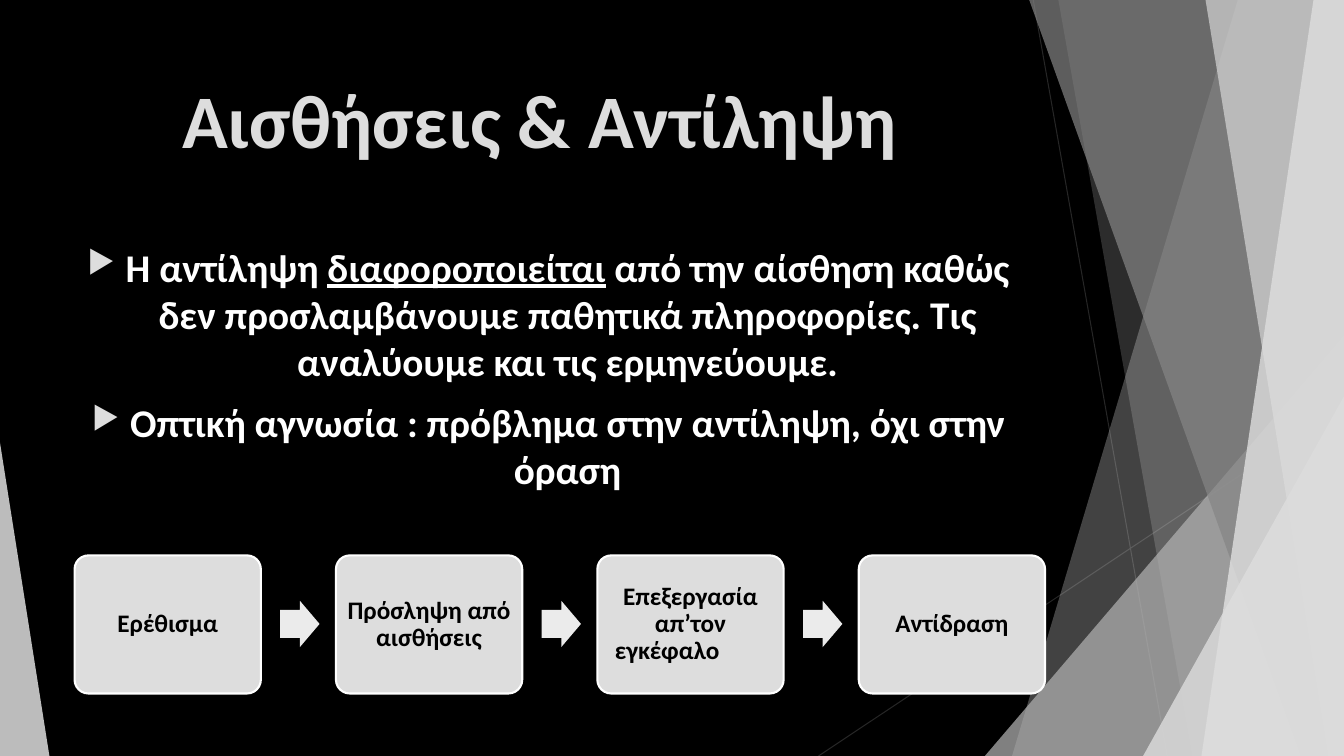
import pptx
import pptx.util
import pptx.dml.color
import pptx.enum.shapes
import pptx.enum.text
import pptx.oxml
import pptx.oxml.ns
import lxml.etree
from dataclasses import dataclass

SHAPE = pptx.enum.shapes.MSO_SHAPE
ANCHOR = pptx.enum.text.MSO_ANCHOR
CENTER = pptx.enum.text.PP_ALIGN.CENTER
WIDTH, HEIGHT = pptx.util.Inches(13.333), pptx.util.Inches(7.5)


@dataclass(frozen=True)
class Theme:
    font: str = "Calibri"
    title_size: int = 54
    body_size: int = 28
    step_size: int = 18
    background: str = "000000"
    accent: str = "DDDDDD"
    arrow: str = "EBEBEB"
    mid_gray: str = "B2B2B2"
    dark_gray: str = "858585"
    hairline: str = "262626"
    light_text: str = "FFFFFF"
    dark_text: str = "000000"


THEME = Theme()

# Facets, back to front: (top x, bottom x, colour, opacity), reaching the right
# edge, or a corner triangle: (left, top, width, apex, colour, opacity)
FACETS = [
    (92.1, 75.3, THEME.accent, 30),
    (78.75, 88.73, THEME.accent, 20),
    (73.28, 44.4, 26.72, 1, THEME.mid_gray, 72),
    (76.58, 96.83, THEME.dark_gray, 70),
    (97.73, 89.4, THEME.arrow, 70),
    (89.7, 98.85, THEME.accent, 65),
    (85.05, 52.4, 14.95, 1, THEME.accent, 80),
    (0, 58.53, 3.68, 0, THEME.accent, 85),
]
HAIRLINES = [(76.88, 0, 86.85, 100), (100, 53.73, 60.9, 100)]

TITLE = "Αισθήσεις & Αντίληψη "
# Each bullet is a list of (text, underlined) runs
BULLETS = [
    [("Η αντίληψη ", False), ("διαφοροποιείται", True),
     (" από την αίσθηση καθώς δεν προσλαμβάνουμε παθητικά πληροφορίες. "
      "Τις αναλύουμε και τις ερμηνεύουμε.", False)],
    [("Οπτική αγνωσία : πρόβλημα στην αντίληψη, όχι στην όραση", False)],
]
STEPS = ["Ερέθισμα", "Πρόσληψη από αισθήσεις",
         "Επεξεργασία απ’τον εγκέφαλο\t", "Αντίδραση"]


# Grid of 100 columns by 100 rows
def x(columns):
    return round(WIDTH * columns / 100)


def y(rows):
    return round(HEIGHT * rows / 100)


def rgb(color):
    return pptx.dml.color.RGBColor.from_string(color)


def paint(sp, color, opacity=100):
    sp.shadow.inherit = False
    sp.line.fill.background()
    sp.fill.solid()
    sp.fill.fore_color.rgb = rgb(color)
    if opacity < 100:
        clr = sp.fill._xPr.find(".//" + pptx.oxml.ns.qn("a:srgbClr"))
        alpha = lxml.etree.SubElement(clr, pptx.oxml.ns.qn("a:alpha"))
        alpha.set("val", str(opacity * 1000))


def add_run(p, text, size, color, underline=False):
    r = p.add_run()
    r.text = text
    r.font.name = THEME.font
    r.font.size = pptx.util.Pt(size)
    r.font.bold = True
    r.font.underline = underline
    r.font.color.rgb = rgb(color)


def add_bullet(p):
    pPr = p._p.get_or_add_pPr()
    pPr.set("marL", str(pptx.util.Inches(0.38)))
    pPr.set("indent", str(-pptx.util.Inches(0.38)))
    ns = pptx.oxml.ns.nsdecls("a")
    for xml in (f'<a:buClr {ns}><a:srgbClr val="{THEME.accent}"/></a:buClr>',
                f'<a:buSzPct {ns} val="80000"/>',
                f'<a:buChar {ns} char="▶"/>'):
        pPr.append(pptx.oxml.parse_xml(xml))


def add_text_box(slide, left, top, width, height):
    tf = slide.shapes.add_textbox(x(left), y(top), x(width), y(height)).text_frame
    tf.word_wrap = True
    tf.vertical_anchor = ANCHOR.TOP
    return tf


def add_hairline(slide, x1, y1, x2, y2):
    line = slide.shapes.add_connector(
        pptx.enum.shapes.MSO_CONNECTOR.STRAIGHT, x(x1), y(y1), x(x2), y(y2))
    line.line.color.rgb = rgb(THEME.hairline)
    line.line.width = pptx.util.Pt(0.75)
    lxml.etree.SubElement(line._element.spPr, pptx.oxml.ns.qn("a:effectLst"))


def add_band(slide, top_x, bottom_x, color, opacity):
    band = slide.shapes.build_freeform(x(top_x), 0)
    band.add_line_segments([(WIDTH, 0), (WIDTH, HEIGHT), (x(bottom_x), HEIGHT)])
    paint(band.convert_to_shape(), color, opacity)


def add_corner(slide, left, top, width, apex, color, opacity):
    sp = slide.shapes.add_shape(SHAPE.ISOSCELES_TRIANGLE, x(left), y(top),
                                x(width), y(100 - top))
    sp.adjustments[0] = apex
    paint(sp, color, opacity)


def add_step(slide, left, text):
    sp = slide.shapes.add_shape(SHAPE.ROUNDED_RECTANGLE, x(left), y(73.47),
                                x(13.86), y(18.27))
    sp.adjustments[0] = 0.1
    paint(sp, THEME.accent)
    sp.line.color.rgb = rgb(THEME.light_text)
    sp.line.width = pptx.util.Pt(1.5)
    tf = sp.text_frame
    tf.word_wrap = True
    tf.vertical_anchor = ANCHOR.MIDDLE
    tf.margin_left = tf.margin_right = pptx.util.Inches(0.07)
    tf.margin_top = tf.margin_bottom = pptx.util.Inches(0.07)
    p = tf.paragraphs[0]
    p.alignment = CENTER
    p.line_spacing = 0.9
    add_run(p, text, THEME.step_size, THEME.dark_text)


def add_arrow(slide, left):
    sp = slide.shapes.add_shape(SHAPE.RIGHT_ARROW, x(left), y(79.47),
                                x(2.93), y(6.13))
    sp.adjustments[0] = 0.6
    sp.adjustments[1] = 0.5
    paint(sp, THEME.arrow)


def main():
    prs = pptx.Presentation()
    prs.slide_width, prs.slide_height = WIDTH, HEIGHT
    slide = prs.slides.add_slide(prs.slide_layouts[6])
    slide.background.fill.solid()
    slide.background.fill.fore_color.rgb = rgb(THEME.background)

    # Faceted backdrop
    for ends in HAIRLINES:
        add_hairline(slide, *ends)
    for facet in FACETS:
        add_facet = add_band if len(facet) == 4 else add_corner
        add_facet(slide, *facet)

    # Title
    p = add_text_box(slide, 5.55, 8.93, 70.5, 19.2).paragraphs[0]
    p.alignment = CENTER
    add_run(p, TITLE, THEME.title_size, THEME.accent)

    # Bullets
    tf = add_text_box(slide, 5.55, 31.47, 70.5, 56.53)
    for i, runs in enumerate(BULLETS):
        p = tf.add_paragraph() if i else tf.paragraphs[0]
        p.alignment = CENTER
        p.space_before = pptx.util.Pt(10 if i else 0)
        add_bullet(p)
        for text, underline in runs:
            add_run(p, text, THEME.body_size, THEME.light_text, underline)

    # Process from stimulus to reaction
    for i, text in enumerate(STEPS):
        left = 5.55 + 19.45 * i
        if i:
            add_arrow(slide, left - 4.15)
        add_step(slide, left, text)

    prs.save("out.pptx")


if __name__ == "__main__":
    main()
